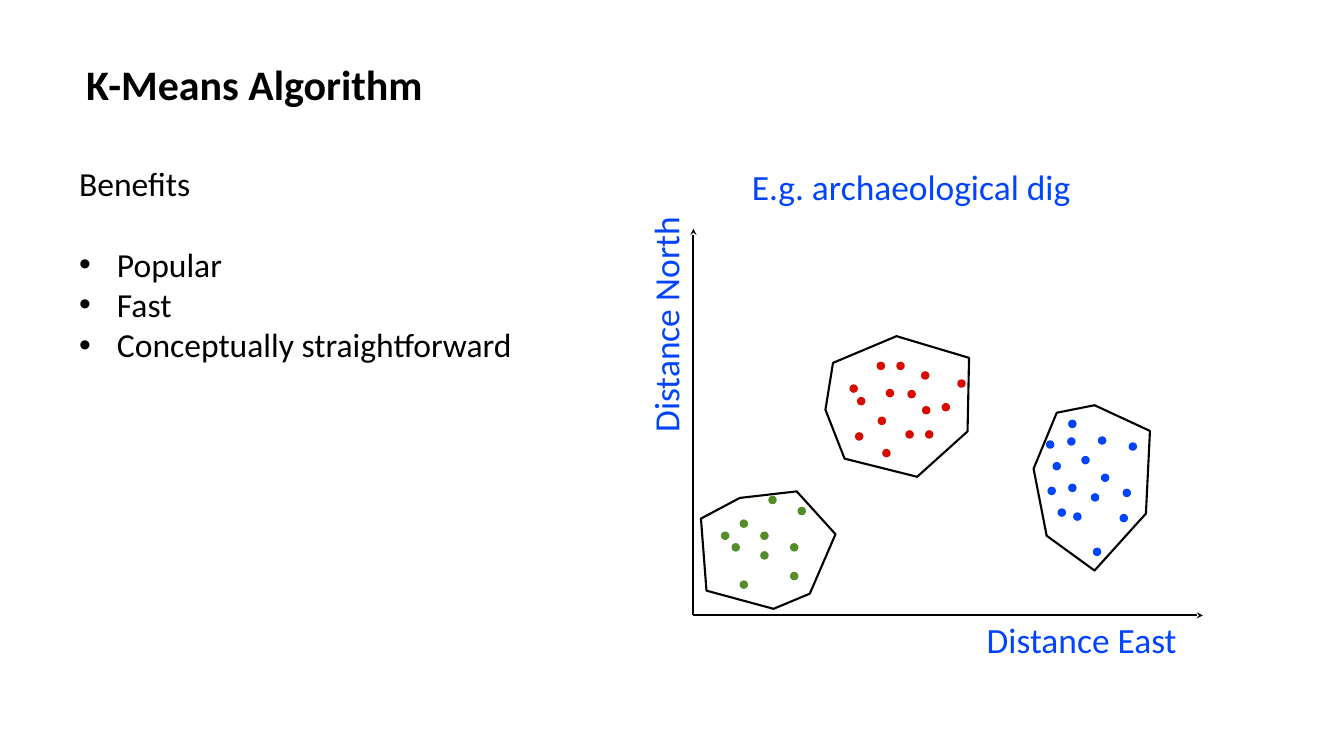
from dataclasses import dataclass

from lxml.etree import SubElement
from pptx import Presentation
from pptx.dml.color import RGBColor
from pptx.enum.shapes import MSO_CONNECTOR as Line, MSO_SHAPE as Shape
from pptx.enum.text import MSO_ANCHOR as Anchor, MSO_AUTO_SIZE as Fit, PP_ALIGN as Align
from pptx.oxml.ns import qn
from pptx.util import Inches, Pt

Point = tuple[float, float]
FONT = "Calibri"
DOT = 0.14
COLORS = {"ink": "000000", "red": "D90B00", "green": "558E28", "blue": "0044FE"}


@dataclass
class Label:
    text: str
    box: tuple[float, float, float, float]
    turn: float = 0


@dataclass
class Cluster:
    color: str
    dots: list[Point]  # top left corner of each dot
    hull: list[Point]


LABELS = [
    Label("Distance East", (19.58, 12.2, 8.94, 0.96)),
    Label("Distance North", (10.53, 5.43, 5.34, 0.96), 270),
    Label("E.g. archaeological dig", (14.92, 3.22, 13.24, 0.96)),
]
CLUSTERS = [
    Cluster(
        "red",
        [(17.41, 7.19), (18.02, 7.75), (16.87, 7.64), (17.02, 7.89), (17.59, 7.73),
         (17.8, 7.19), (17.43, 8.28), (17.98, 8.55), (18.31, 8.07), (18.29, 7.38),
         (16.98, 8.59), (17.52, 8.92), (18.7, 8.01), (18.37, 8.55), (19.01, 7.54)],
        [(17.79, 6.67), (16.53, 7.2), (16.38, 8.13), (16.76, 9.1), (18.2, 9.46),
         (19.2, 8.56), (19.23, 7.1)],
    ),
    Cluster(
        "green",
        [(14.32, 10.56), (14.69, 10.32), (14.53, 10.79), (15.1, 10.56), (15.1, 10.95),
         (15.69, 10.79), (14.69, 11.53), (15.69, 11.36), (15.26, 9.85), (15.84, 10.07)],
        [(15.81, 9.75), (16.58, 10.6), (16.07, 11.78), (15.35, 12.08), (14.02, 11.72),
         (13.91, 10.29), (14.68, 9.88)],
    ),
    Cluster(
        "blue",
        [(21.21, 8.34), (21.19, 8.69), (20.77, 8.75), (21.8, 8.67), (21.47, 9.06),
         (20.9, 9.18), (21.86, 9.41), (21.21, 9.61), (20.8, 9.67), (21, 10.1),
         (21.66, 9.8), (22.29, 9.71), (21.31, 10.18), (22.23, 10.21), (22.41, 8.79),
         (21.7, 10.88)],
        [(20.51, 9.3), (20.77, 10.63), (21.72, 11.32), (22.74, 10.19), (22.82, 8.55),
         (21.72, 8.04), (20.97, 8.19)],
    ),
]


def rgb(name: str) -> RGBColor:
    return RGBColor.from_string(COLORS[name])


def place(shape, box: tuple[float, float, float, float]) -> None:
    shape.left, shape.top, shape.width, shape.height = map(Inches, box)


def frame(shape, anchor: Anchor):
    text = shape.text_frame
    text.word_wrap = True
    text.auto_size = Fit.NONE
    text.vertical_anchor = anchor
    text.margin_left = text.margin_top = text.margin_right = text.margin_bottom = 0
    return text


def style(para, size: float, color: str, bold: bool = False) -> None:
    para.alignment = Align.LEFT
    para.space_before = Pt(0)
    para.font.name = FONT
    para.font.size = Pt(size)
    para.font.bold = bold
    para.font.color.rgb = rgb(color)


def bullet(para, on: bool) -> None:
    props = para._p.get_or_add_pPr()
    hang = Inches(0.75) if on else 0
    props.set("marL", str(hang))
    props.set("indent", str(-hang))
    if on:
        SubElement(props, qn("a:buChar")).set("char", "•")
    else:
        SubElement(props, qn("a:buNone"))


def add_label(shapes, label: Label) -> None:
    box = shapes.add_textbox(*map(Inches, label.box))
    box.rotation = label.turn
    para = frame(box, Anchor.MIDDLE).paragraphs[0]
    para.text = label.text
    style(para, 50.6, "blue")


def add_axis(shapes, start: Point, end: Point) -> None:
    axis = shapes.add_connector(Line.STRAIGHT, *map(Inches, start + end))
    axis.line.color.rgb = rgb("ink")
    axis.line.width = Pt(3)
    SubElement(axis.line._get_or_add_ln(), qn("a:tailEnd")).set("type", "stealth")
    SubElement(axis._element.spPr, qn("a:effectLst"))


def add_dot(shapes, spot: Point, color: str) -> None:
    dot = shapes.add_shape(Shape.OVAL, *map(Inches, spot + (DOT, DOT)))
    dot.shadow.inherit = False
    dot.fill.solid()
    dot.fill.fore_color.rgb = dot.line.color.rgb = rgb(color)
    dot.line.width = Pt(2)


def add_hull(shapes, points: list[Point]) -> None:
    first, *rest = [(Inches(x), Inches(y)) for x, y in points]
    path = shapes.build_freeform(*first)
    path.add_line_segments(rest, close=True)
    hull = path.convert_to_shape()
    hull.shadow.inherit = False
    hull.fill.background()
    hull.line.color.rgb = rgb("ink")
    hull.line.width = Pt(3)


def main() -> None:
    deck = Presentation()
    deck.slide_width, deck.slide_height = Inches(26.67), Inches(15)
    slide = deck.slides.add_slide(deck.slide_layouts[1])
    shapes = slide.shapes

    # Title
    place(shapes.title, (1.71, 1.11, 19.04, 1.11))
    head = frame(shapes.title, Anchor.MIDDLE).paragraphs[0]
    head.text = "K-Means Algorithm"
    style(head, 60, "ink", bold=True)

    # Benefits list
    body = slide.placeholders[1]
    place(body, (1.57, 3.23, 9.63, 8.99))
    text = frame(body, Anchor.TOP)
    text.text = "Benefits\nPopular\nFast\nConceptually straightforward"
    for i, para in enumerate(text.paragraphs):
        bullet(para, i > 0)
        style(para, 48, "ink")
    text.paragraphs[1].space_before = Pt(58)

    # Axes and their labels
    origin = (13.76, 12.21)
    add_axis(shapes, origin, (13.76, 4.54))
    add_axis(shapes, origin, (23.87, 12.21))
    for label in LABELS:
        add_label(shapes, label)

    # Clusters
    for group in CLUSTERS:
        for spot in group.dots:
            add_dot(shapes, spot, group.color)
    for group in CLUSTERS:
        add_hull(shapes, group.hull)

    deck.save("out.pptx")


if __name__ == "__main__":
    main()
